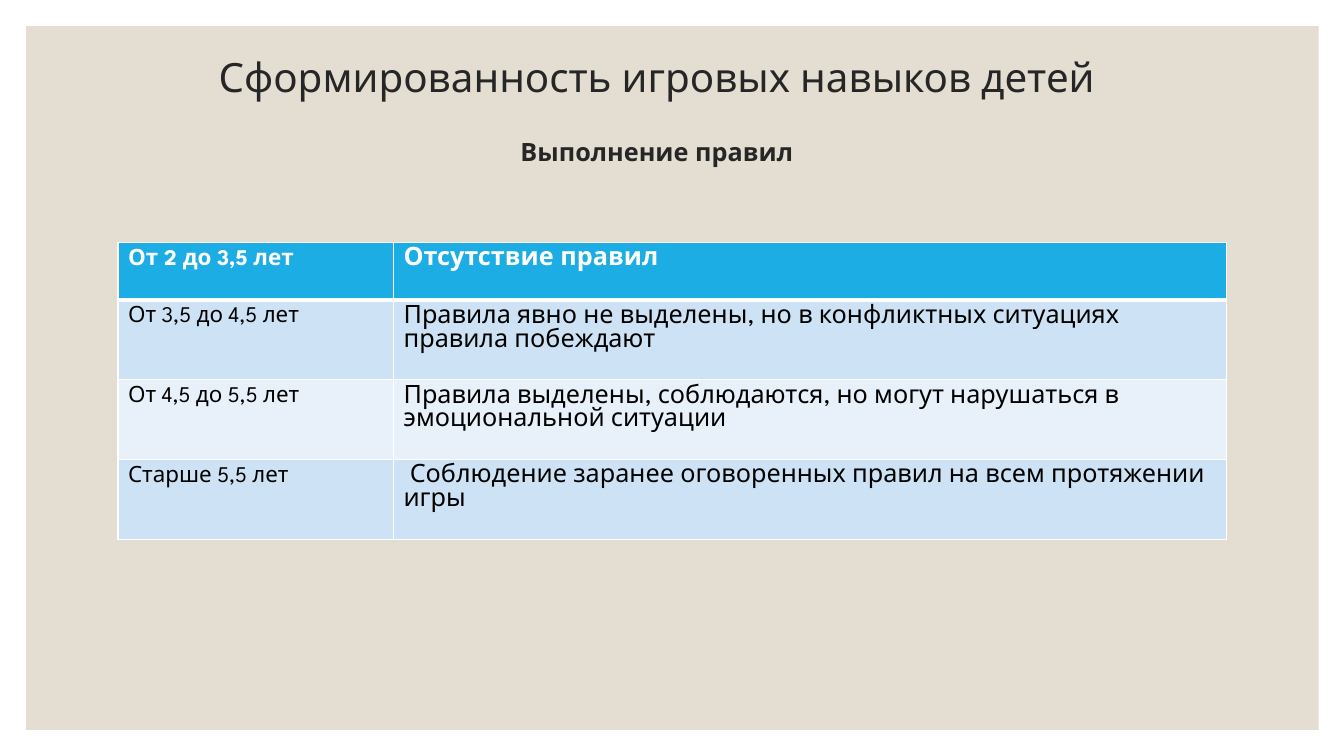
import lxml.etree
import pptx
import pptx.dml.color
import pptx.enum.shapes
import pptx.enum.text
import pptx.oxml.ns
import pptx.util

COLORS = {
    "frame": "E3DED1",
    "title": "262626",
    "header": "1CADE4",
    "odd": "CDE3F5",
    "even": "E8F1FA",
    "white": "FFFFFF",
    "black": "000000",
}
FONT = "League Spartan"
TITLE = "Сформированность игровых навыков детей"
SUBTITLE = "Выполнение правил"
RULES_BY_AGE = [
    ("От 2 до 3,5 лет", "Отсутствие правил"),
    ("От 3,5 до 4,5 лет", "Правила явно не выделены, но в конфликтных ситуациях правила побеждают"),
    ("От 4,5 до 5,5 лет", "Правила выделены, соблюдаются, но могут нарушаться в эмоциональной ситуации"),
    ("Старше 5,5 лет", " Соблюдение заранее оговоренных правил на всем протяжении игры"),
]
AGE_FORMAT = {"size": pptx.util.Pt(16), "line": pptx.util.Pt(16)}
RULE_FORMAT = {"size": pptx.util.Pt(18), "line": pptx.util.Pt(17)}


def color(name):
    return pptx.dml.color.RGBColor.from_string(COLORS[name])


def apply(target, values):
    for name, value in values.items():
        setattr(target, name, value)


class SlideBuilder:
    def __init__(self, width, height):
        self.deck = pptx.Presentation()
        apply(self.deck, {
            "slide_width": pptx.util.Inches(width),
            "slide_height": pptx.util.Inches(height),
        })
        self.page = self.deck.slides.add_slide(self.deck.slide_layouts[5])

    def across(self, share):
        return round(self.deck.slide_width * share / 100)

    def down(self, share):
        return round(self.deck.slide_height * share / 100)

    def area(self, left, top, width, height):
        return self.across(left), self.down(top), self.across(width), self.down(height)

    def add_text(self, para, text, ink, para_format, font_format):
        apply(para, para_format)
        span = para.add_run()
        span.text = text
        apply(span.font, {"name": FONT, **font_format})
        span.font.color.rgb = color(ink)

    def frame(self, *shares):
        panel = self.page.shapes.add_shape(
            pptx.enum.shapes.MSO_SHAPE.RECTANGLE, *self.area(*shares))
        panel.shadow.inherit = False
        panel.fill.solid()
        panel.fill.fore_color.rgb = color("frame")
        panel.line.fill.background()
        self.page.shapes._spTree.insert(2, panel._element)

    def title(self, lines, *shares):
        box = self.page.shapes.title
        apply(box, dict(zip(("left", "top", "width", "height"), self.area(*shares))))
        apply(box.text_frame, {
            "word_wrap": True,
            "auto_size": pptx.enum.text.MSO_AUTO_SIZE.NONE,
            "vertical_anchor": pptx.enum.text.MSO_ANCHOR.TOP,
        })
        for index, (text, size, bold, gap) in enumerate(lines):
            para = box.text_frame.add_paragraph() if index else box.text_frame.paragraphs[0]
            self.add_text(para, text, "title", {
                "alignment": pptx.enum.text.PP_ALIGN.CENTER,
                "line_spacing": 0.9,
                "space_before": pptx.util.Pt(gap),
            }, {"size": pptx.util.Pt(size), "bold": bold})

    def border(self, cell, side, points):
        properties = cell._tc.get_or_add_tcPr()
        qn = pptx.oxml.ns.qn
        line = lxml.etree.SubElement(
            properties, qn(f"a:ln{side}"), w=str(pptx.util.Pt(points)))
        fill = lxml.etree.SubElement(line, qn("a:solidFill"))
        lxml.etree.SubElement(fill, qn("a:srgbClr"), val=COLORS["white"])

    def table(self, rows, columns, heights, left, top):
        place = self.area(left, top, sum(columns), sum(heights))
        grid = self.page.shapes.add_table(len(rows), len(columns), *place).table
        for column, share in zip(grid.columns, columns):
            column.width = self.across(share)
        for index, (row, share, texts) in enumerate(zip(grid.rows, heights, rows)):
            row.height = self.down(share)
            header = index == 0
            fill = "header" if header else "odd" if index % 2 else "even"
            widths = {"L": 1, "R": 1, "T": 3 if index == 1 else 1, "B": 3 if header else 1}
            for cell, text, style in zip(row.cells, texts, (AGE_FORMAT, RULE_FORMAT)):
                for side, points in widths.items():
                    self.border(cell, side, points)
                cell.fill.solid()
                cell.fill.fore_color.rgb = color(fill)
                self.add_text(
                    cell.text_frame.paragraphs[0], text, "white" if header else "black",
                    {"line_spacing": style["line"]},
                    {"size": style["size"], "bold": header})


def main():
    builder = SlideBuilder(13.33, 7.5)
    builder.frame(1.95, 3.47, 96.17, 93.07)
    builder.title([(TITLE, 28.8, False, 0), (SUBTITLE, 18, True, 27)], 6.45, 7, 84.85, 21.3)
    builder.table(RULES_BY_AGE, [20.5, 62], [7.6, 10.55, 10.55, 10.55], 8.78, 32.1)
    builder.deck.save("out.pptx")


if __name__ == "__main__":
    main()
